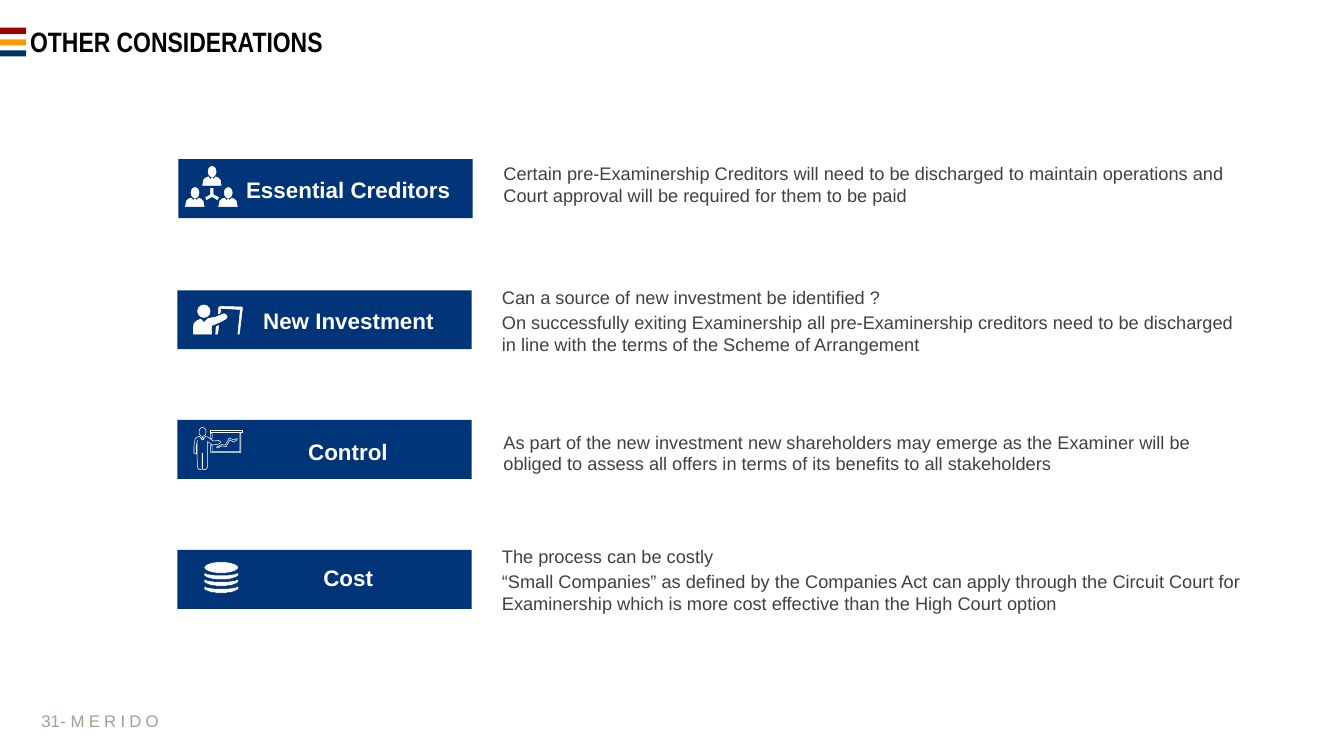
from math import cos, pi, sin

from pptx import Presentation
from pptx.dml.color import RGBColor
from pptx.enum.shapes import MSO_SHAPE as Shape
from pptx.enum.text import MSO_ANCHOR as Anchor, PP_ALIGN as Align
from pptx.util import Pt

PX = 9144  # 100 px to the inch
THEME = {
    "red": "990000", "orange": "FF9900", "navy": "003366", "bar": "003478",
    "white": "FFFFFF", "title": "000000", "body": "404040", "footer": "AA9C8F",
    "title_size": 40, "label_size": 32, "body_size": 26, "footer_size": 24,
    "font": "Arial", "title_font": "Arial Narrow", "icon_line": 0.75,
}

prs = Presentation()
prs.slide_width, prs.slide_height = 2667 * PX, 1500 * PX
s = prs.slides.add_slide(prs.slide_layouts[6])


def add_text(box, lines, role, font="font", bold=False, align=Align.LEFT,
             anchor=Anchor.TOP, wrap=True, inset=(0, 0)):
    """Place lines as paragraphs; role picks the theme's colour and size."""
    tf = s.shapes.add_textbox(*[v * PX for v in box]).text_frame
    tf.word_wrap, tf.vertical_anchor = wrap, anchor
    tf.margin_left = tf.margin_right = inset[0] * PX
    tf.margin_top = tf.margin_bottom = inset[1] * PX
    tf.text = "\n".join(lines)
    for i, p in enumerate(tf.paragraphs):
        p.alignment = align
        if i:
            p.space_before = Pt(5.2)
        for r in p.runs:
            r.font.name, r.font.bold = THEME[font], bold
            r.font.size = Pt(THEME[role + "_size"])
            r.font.color.rgb = RGBColor.from_string(THEME.get(role, THEME["white"]))
    return tf


def add_figure(geometry, fill=None, line=None):
    """Draw (preset, left, top, width, height) or a list of closed contours."""
    if isinstance(geometry, tuple):
        preset, *box = geometry
        sp = s.shapes.add_shape(preset, *[v * PX for v in box])
    else:
        builder = s.shapes.build_freeform(*geometry[0][0], scale=PX)
        for i, contour in enumerate(geometry):
            if i:
                builder.move_to(*contour[0])
            builder.add_line_segments(contour[1:], close=True)
        sp = builder.convert_to_shape()
    sp.shadow.inherit = False
    if fill:
        sp.fill.solid()
        sp.fill.fore_color.rgb = RGBColor.from_string(THEME[fill])
    else:
        sp.fill.background()
    if line:
        sp.line.color.rgb = RGBColor.from_string(THEME[line])
        sp.line.width = Pt(THEME["icon_line"])
    else:
        sp.line.fill.background()


# Header and footer
for color, top in (("red", 55), ("orange", 78), ("navy", 100)):
    add_figure((Shape.RECTANGLE, 0, top, 52, 12), color)
title = add_text((50, 46, 2567, 79), ["OTHER CONSIDERATIONS"], "title", "title_font",
                 bold=True, anchor=Anchor.MIDDLE, inset=(10, 5))
title.paragraphs[0].line_spacing = 0.9
add_text((44, 1390, 75, 80), ["31"], "footer", align=Align.RIGHT,
         anchor=Anchor.MIDDLE, inset=(0, 5))
footer = add_text((110, 1390, 229, 80), ["- "], "footer", anchor=Anchor.MIDDLE,
                  wrap=False, inset=(10, 5))
dash = footer.paragraphs[0].runs[0]
name = footer.paragraphs[0].add_run()
name.text = "MERIDO"
name.font.name, name.font.size = dash.font.name, dash.font.size
name.font.color.rgb = dash.font.color.rgb
name.font._element.set("spc", "600")

# Rows: bar position, label and its box, body position and lines
rows = [
    ((354, 316), "Essential Creditors", (487, 350, 408, 54), (999, 323, 1487, 88),
     ["Certain pre-Examinership Creditors will need to be discharged to maintain "
      "operations and Court approval will be required for them to be paid"]),
    ((352, 576), "New Investment", (521, 609, 341, 54), (996, 568, 1487, 140),
     ["Can a source of new investment be identified ?",
      "On successfully exiting Examinership all pre-Examinership creditors need to be "
      "discharged in line with the terms of the Scheme of Arrangement"]),
    ((352, 833), "Control", (611, 869, 159, 54), (999, 855, 1487, 88),
     ["As part of the new investment new shareholders may emerge as the Examiner will "
      "be obliged to assess all offers in terms of its benefits to all stakeholders"]),
    ((352, 1091), "Cost", (641, 1120, 100, 54), (996, 1082, 1487, 140),
     ["The process can be costly",
      "“Small Companies” as defined by the Companies Act can apply through the Circuit "
      "Court for Examinership which is more cost effective than the High Court option"]),
]
for bar, label, label_box, body_box, body in rows:
    add_figure((Shape.RECTANGLE, *bar, 584, 117), "bar")
    add_text(label_box, [label], "label", bold=True, align=Align.CENTER, wrap=False)
    add_text(body_box, body, "body")

# Creditors icon: three linked people
person = [(0, 38), (2, 27), (6, 23), (11, 21), (12, 21), (17, 29), (17, 24), (19, 22),
          (21, 24), (20, 29), (26, 21), (31, 23), (35, 27), (37, 38)]
for x, y in ((368, 372), (434, 372), (402, 330)):
    add_figure((Shape.OVAL, x + 11, y, 16, 21), "white", "white")
    add_figure([[(x + dx, y + dy) for dx, dy in person]], "white", "white")
links = [(421, 390), (410, 396), (408, 392), (418, 386), (418, 374), (423, 374),
         (423, 386), (434, 392), (431, 396)]
add_figure([links], "white", "white")

# Investment icon: presenter at a board
board = [(481, 610), (479, 609), (437, 608), (434, 610), (433, 623), (437, 621),
         (438, 612), (477, 614), (472, 663), (475, 663), (481, 613)]
board_leg = [(428, 663), (432, 663), (434, 646), (429, 648)]
presenter = [(420, 646), (435, 640), (448, 633), (451, 629), (449, 625), (446, 623),
             (443, 623), (428, 629), (413, 632), (405, 640), (398, 633), (390, 637),
             (385, 642), (384, 649), (384, 663), (420, 663)]
for part in (board, board_leg, presenter):
    add_figure([part], "white", "white")
add_figure((Shape.OVAL, 392, 605, 25, 25), "white", "white")

# Control icon: outlined speaker with a chart
frame = [(478, 860), (478, 898), (418, 898), (418, 883), (421, 884), (421, 896),
         (476, 896), (476, 860)]
trend = [(430, 887), (440, 882), (447, 883), (455, 869), (464, 873), (470, 870),
         (471, 873), (464, 877), (456, 873), (449, 886), (440, 885), (431, 889)]
rail = [(417, 854), (480, 854), (480, 858), (417, 858)]
frame_end = [(418, 870), (418, 860), (421, 860), (421, 871)]
speaker = [(416, 870), (423, 875), (434, 874), (438, 877), (435, 881), (423, 883),
           (420, 882), (412, 876), (412, 927), (408, 932), (402, 931), (402, 899),
           (401, 899), (401, 931), (395, 932), (392, 927), (391, 902), (391, 878),
           (392, 874), (390, 882), (390, 901), (385, 899), (385, 884), (387, 872),
           (390, 868), (395, 866), (396, 866), (401, 873), (401, 870), (400, 869),
           (402, 867), (404, 869), (403, 870), (403, 873), (408, 866), (412, 867)]
add_figure([frame, trend, rail, frame_end], line="white")
add_figure([speaker], line="white")
add_figure((Shape.OVAL, 395, 848, 14, 18), line="white")

# Cost icon: a stack of coins, the top one whole and three rims below
STEPS = 24
angles = [pi * i / STEPS for i in range(STEPS + 1)]
coins = [[(439 + 34 * cos(2 * a), 1126 + 11 * sin(2 * a)) for a in angles]]
for top in (1135, 1148, 1162):
    upper = [(439 - 34 * cos(a), top + 6 * sin(a)) for a in angles]
    lower = [(439 + 34 * cos(a), top + 6 + 9 * sin(a)) for a in angles]
    coins.append(upper + lower)
add_figure(coins, "white", "navy")

prs.save("out.pptx")
